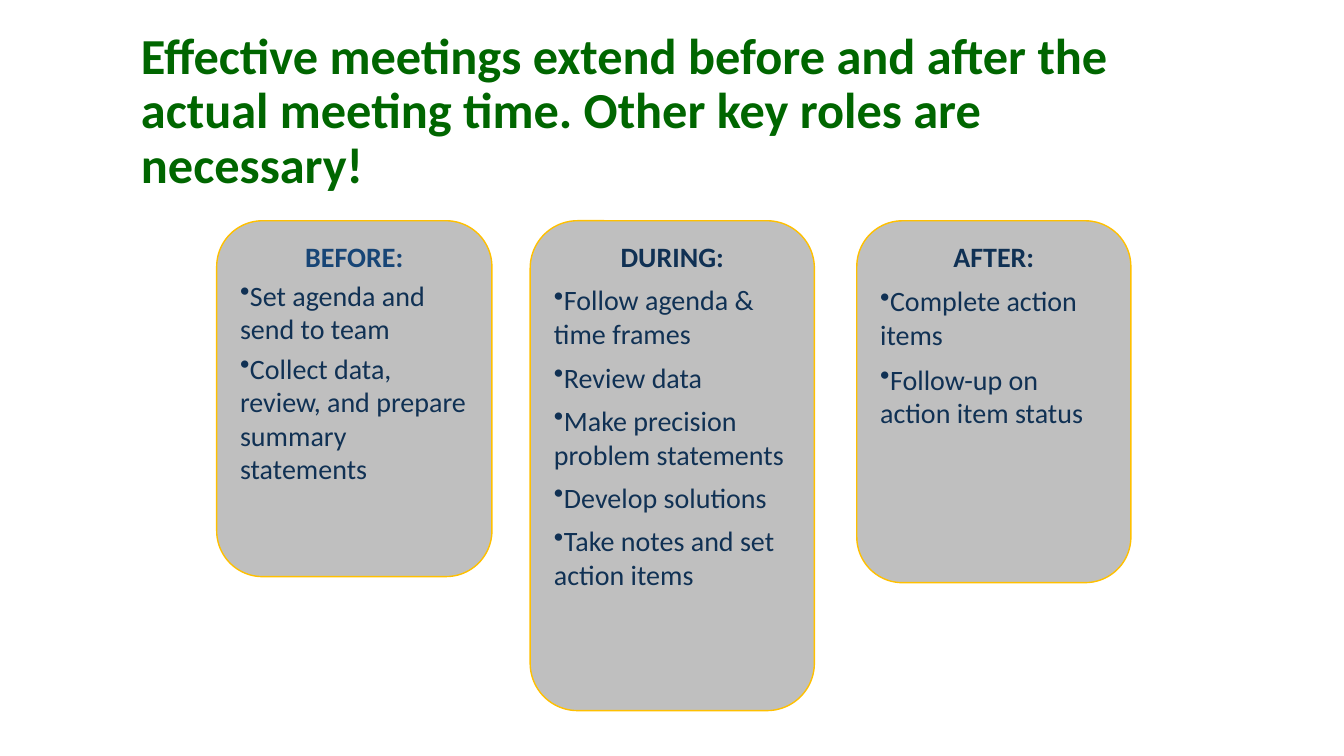
import pptx
import pptx.util
import pptx.dml.color
import pptx.enum.shapes
import pptx.enum.text
import pptx.oxml.ns
import lxml.etree

Pt = pptx.util.Pt
ALIGN = pptx.enum.text.PP_ALIGN
ANCHOR = pptx.enum.text.MSO_ANCHOR

COLORS = {
    "title": "006600",
    "heading": "174576",
    "text": "103154",
    "card": "BFBFBF",
    "border": "FFC000",
}

TITLE = ("Effective meetings extend before and after the actual meeting time. "
         "Other key roles are necessary!")

CARD_TOP = 157.7
PHASES = [
    {"box": (154.8, CARD_TOP, 196.6, 254.2), "heading": "BEFORE:",
     "color": "heading", "before": 0,
     "items": ["Set agenda and send to team",
               "Collect data, review, and prepare summary statements"]},
    {"box": (378.7, CARD_TOP, 203, 349.9), "heading": "DURING:",
     "color": "text", "before": 3,
     "items": ["Follow agenda & time frames", "Review data",
               "Make precision problem statements", "Develop solutions",
               "Take notes and set action items"]},
    {"box": (612, CARD_TOP, 195.8, 258.5), "heading": "AFTER:",
     "color": "text", "before": 4,
     "items": ["Complete action items", "Follow-up on action item status"]},
]


def rgb(name):
    return pptx.dml.color.RGBColor.from_string(COLORS[name])


def apply_format(obj, values):
    for name, value in values.items():
        setattr(obj, name, value)


def write_paragraph(p, text, color, size, bold, layout):
    r = p.add_run()
    r.text = text
    apply_format(r.font, {"name": "Calibri", "size": Pt(size), "bold": bold})
    r.font.color.rgb = rgb(color)
    apply_format(p, layout)


def add_bullet(p):
    bullet = lxml.etree.SubElement(p._p.get_or_add_pPr(), pptx.oxml.ns.qn("a:buChar"))
    bullet.set("char", "•")


def add_title(slide, box):
    sp = slide.shapes.add_textbox(*map(Pt, box))
    tf = sp.text_frame
    apply_format(tf, {"word_wrap": True, "vertical_anchor": ANCHOR.MIDDLE})
    write_paragraph(tf.paragraphs[0], TITLE, "title", 36, True, {"line_spacing": 0.9})


def add_phase(slide, phase):
    sp = slide.shapes.add_shape(pptx.enum.shapes.MSO_SHAPE.ROUNDED_RECTANGLE,
                                *map(Pt, phase["box"]))
    sp.shadow.inherit = False
    sp.fill.solid()
    sp.fill.fore_color.rgb = rgb("card")
    sp.line.color.rgb = rgb("border")
    sp.line.width = Pt(1)
    tf = sp.text_frame
    apply_format(tf, {"word_wrap": True, "vertical_anchor": ANCHOR.TOP})
    spacing = {"space_before": Pt(phase["before"]), "space_after": Pt(4)}
    write_paragraph(tf.paragraphs[0], phase["heading"], phase["color"], 20, True,
                    {"alignment": ALIGN.CENTER, **spacing})
    for item in phase["items"]:
        p = tf.add_paragraph()
        write_paragraph(p, item, "text", 20, False, {"alignment": ALIGN.LEFT, **spacing})
        add_bullet(p)


def main():
    prs = pptx.Presentation()
    apply_format(prs, {"slide_width": Pt(960), "slide_height": Pt(540)})
    slide = prs.slides.add_slide(prs.slide_layouts[6])
    add_title(slide, (93.6, 18.7, 771.8, 123.1))
    for phase in PHASES:
        add_phase(slide, phase)
    prs.save("out.pptx")


if __name__ == "__main__":
    main()
